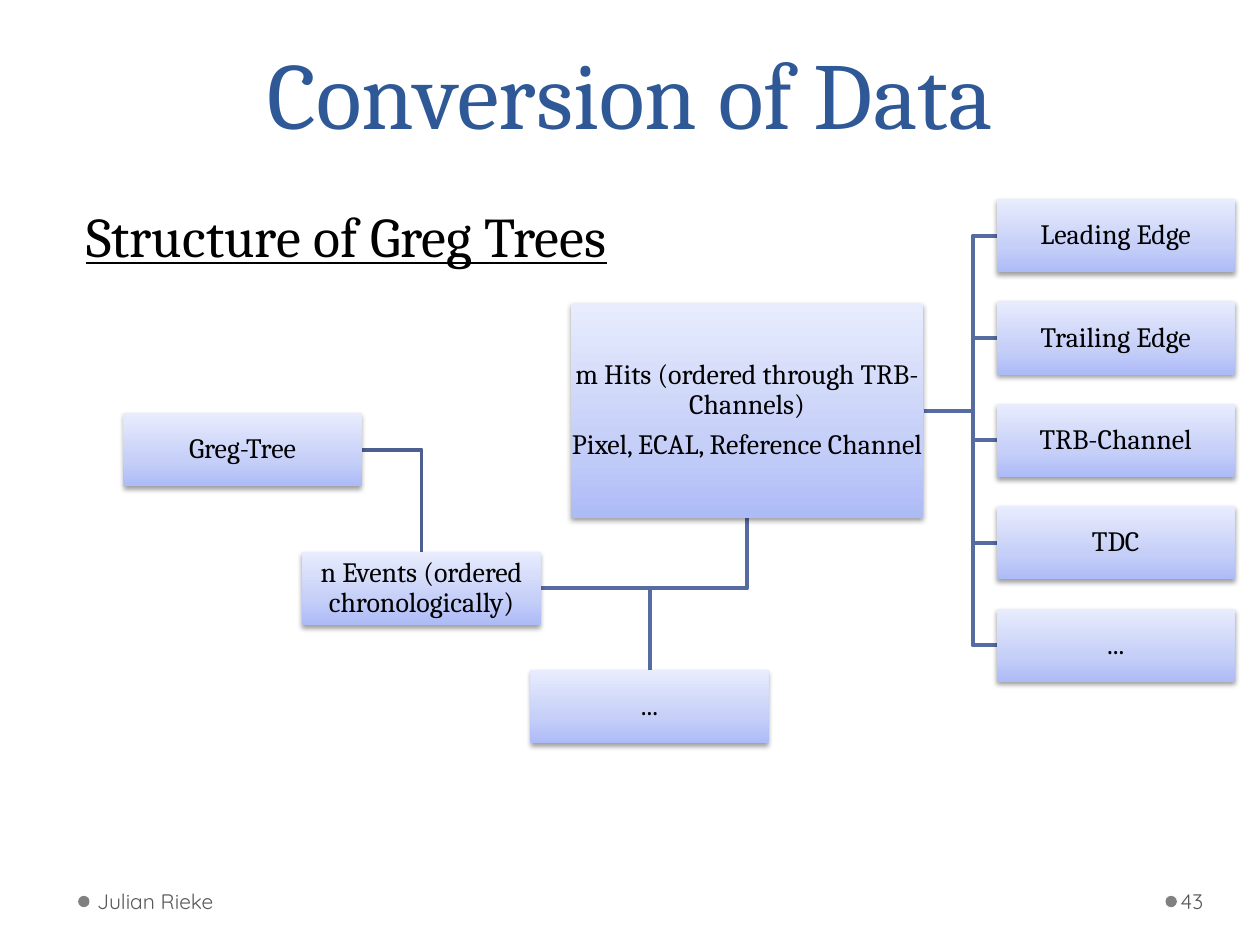
import copy
import pptx
import pptx.dml.color
import pptx.enum.shapes
import pptx.enum.text
import pptx.oxml
import pptx.oxml.ns
import pptx.util

COLS, ROWS = 100, 75  # grid over the whole slide
BOX_W, BOX_H = 18.9, 5.8  # standard tree box, in grid units
TOP = pptx.enum.text.MSO_ANCHOR.TOP
MIDDLE = pptx.enum.text.MSO_ANCHOR.MIDDLE
BOTTOM = pptx.enum.text.MSO_ANCHOR.BOTTOM
LEFT = pptx.enum.text.PP_ALIGN.LEFT
CENTER = pptx.enum.text.PP_ALIGN.CENTER
SHAPES = pptx.enum.shapes.MSO_SHAPE


def rgb(value):
    return pptx.dml.color.RGBColor.from_string(value)


def center(box):
    x, y, w, h = box
    return x + w / 2, y + h / 2


class Deck:
    serif, sans = "Cambria", "Quicksand"
    black, blue, grey, dot_grey = "000000", "2F5897", "595959", "808080"
    gradient = [(0, "ADBBF6"), (0.35, "C5CFF8"), (1, "E8ECFD")]
    shadow = (
        '<a:outerShdw xmlns:a="http://schemas.openxmlformats.org/drawingml/2006/main"'
        ' blurRad="39370" dist="20320" dir="5400000" rotWithShape="0">'
        '<a:srgbClr val="000000"><a:alpha val="38000"/></a:srgbClr></a:outerShdw>'
    )

    def __init__(self):
        self.prs = pptx.Presentation()
        self.prs.slide_width = pptx.util.Inches(10)
        self.prs.slide_height = pptx.util.Inches(7.5)
        self.s = self.prs.slides.add_slide(self.prs.slide_layouts[6])

    def grid(self, x, y):
        return (round(x * self.prs.slide_width / COLS),
                round(y * self.prs.slide_height / ROWS))

    def place(self, box):
        return self.grid(*box[:2]) + self.grid(*box[2:])

    def fill_text(self, sp, lines, font, color, insets=None, anchor=MIDDLE,
                  wrap=True, para=None):
        tf = sp.text_frame
        frame = {"word_wrap": wrap, "vertical_anchor": anchor}
        if insets:
            sides = ("margin_left", "margin_top", "margin_right", "margin_bottom")
            frame.update(zip(sides, map(pptx.util.Inches, insets)))
        for name, value in frame.items():
            setattr(tf, name, value)
        for i, line in enumerate(lines):
            p = tf.add_paragraph() if i else tf.paragraphs[0]
            for name, value in (para or {}).items():
                setattr(p, name, value)
            r = p.add_run()
            r.text = line
            for name, value in font.items():
                setattr(r.font, name, value)
            r.font.color.rgb = rgb(color)

    def text(self, box, line, font, color, **style):
        sp = self.s.shapes.add_textbox(*self.place(box))
        self.fill_text(sp, [line], font, color, **style)

    def node(self, box, *lines):
        sp = self.s.shapes.add_shape(SHAPES.RECTANGLE, *self.place(box))
        sp.line.fill.background()
        sp.fill.gradient()
        sp.fill.gradient_angle = 90
        stops = sp._element.spPr.find(".//" + pptx.oxml.ns.qn("a:gsLst"))
        stops.insert(1, copy.deepcopy(stops[0]))
        for stop, (position, color) in zip(sp.fill.gradient_stops, self.gradient):
            stop.position = position
            stop.color.rgb = rgb(color)
        sp.shadow.inherit = False
        effects = sp._element.spPr.find(pptx.oxml.ns.qn("a:effectLst"))
        effects.append(pptx.oxml.parse_xml(self.shadow))
        self.fill_text(sp, lines, {"name": self.serif, "size": pptx.util.Pt(16)},
                       self.black, insets=[0.01] * 4,
                       para={"alignment": CENTER, "line_spacing": 0.9,
                             "space_after": pptx.util.Pt(5.6)})

    def elbow(self, points, color="576BA3"):
        start, *rest = [self.grid(*point) for point in points]
        builder = self.s.shapes.build_freeform(*start)
        builder.add_line_segments(rest, close=False)
        sp = builder.convert_to_shape()
        sp.fill.background()
        sp.line.color.rgb = rgb(color)
        sp.line.width = pptx.util.Pt(2.25)
        sp.shadow.inherit = False

    def dot(self, x, y, size=0.9):
        sp = self.s.shapes.add_shape(SHAPES.OVAL, *self.place((x, y, size, size)))
        sp.fill.solid()
        sp.fill.fore_color.rgb = rgb(self.dot_grey)
        sp.line.fill.background()
        sp.shadow.inherit = False

    def footer(self, dot_x, box, line, insets):
        self.dot(dot_x, 71.1)
        self.text(box, line, {"name": self.sans, "size": pptx.util.Pt(12)},
                  self.grey, insets=insets, para={"alignment": LEFT})


def main():
    deck = Deck()

    # Places of the tree boxes
    tree = (9.8, 32.8, BOX_W, BOX_H)
    events = (24, 43.8, BOX_W, BOX_H)
    hits = (45.3, 24.1, 28, 17)
    more = (42.1, 53.2, BOX_W, BOX_H)
    fields = ["Leading Edge", "Trailing Edge", "TRB-Channel", "TDC", "..."]
    leaves = [(79.1, 15.8 + 8.13 * i, BOX_W, BOX_H) for i in range(len(fields))]

    # Branches, drawn beneath the boxes
    events_x, events_y = center(events)
    events_right = events[0] + BOX_W
    for child, edge in ((more, more[1]), (hits, hits[1] + hits[3])):
        x = center(child)[0]
        deck.elbow([(events_right, events_y), (x, events_y), (x, edge)])
    hits_right, hits_y = hits[0] + hits[2], center(hits)[1]
    trunk = 77.2
    for leaf in leaves:
        y = center(leaf)[1]
        deck.elbow([(hits_right, hits_y), (trunk, hits_y), (trunk, y), (leaf[0], y)])
    tree_y = center(tree)[1]
    deck.elbow([(tree[0] + BOX_W, tree_y), (events_x, tree_y),
                (events_x, events[1])], "4D5E90")

    # Tree boxes
    deck.node(tree, "Greg-Tree")
    deck.node(events, "n Events (ordered chronologically)")
    deck.node(hits, "m Hits (ordered through TRB-Channels)",
              "Pixel, ECAL, Reference Channel")
    for leaf, field in zip(leaves, fields):
        deck.node(leaf, field)
    deck.node(more, "...")

    # Title and heading
    deck.text((5, 0, 90, 12.3), "Conversion of Data",
              {"name": deck.serif, "size": pptx.util.Pt(54)}, deck.blue,
              anchor=BOTTOM,
              para={"alignment": CENTER, "line_spacing": pptx.util.Pt(58)})
    deck.text((3.5, 15.5, 48, 6.4), "Structure of Greg Trees",
              {"name": deck.serif, "size": pptx.util.Pt(32), "underline": True},
              deck.black, wrap=False, anchor=TOP, para={"alignment": CENTER})

    # Footer
    deck.footer(6.2, (7.2, 69.5, 31.1, 4), "Julian Rieke", (0.05, 0.05, 0.1, 0.05))
    deck.footer(92.5, (93.4, 69.5, 6.1, 4), "43", (0.03, 0.05, 0.05, 0.05))

    deck.prs.save("out.pptx")


if __name__ == "__main__":
    main()
